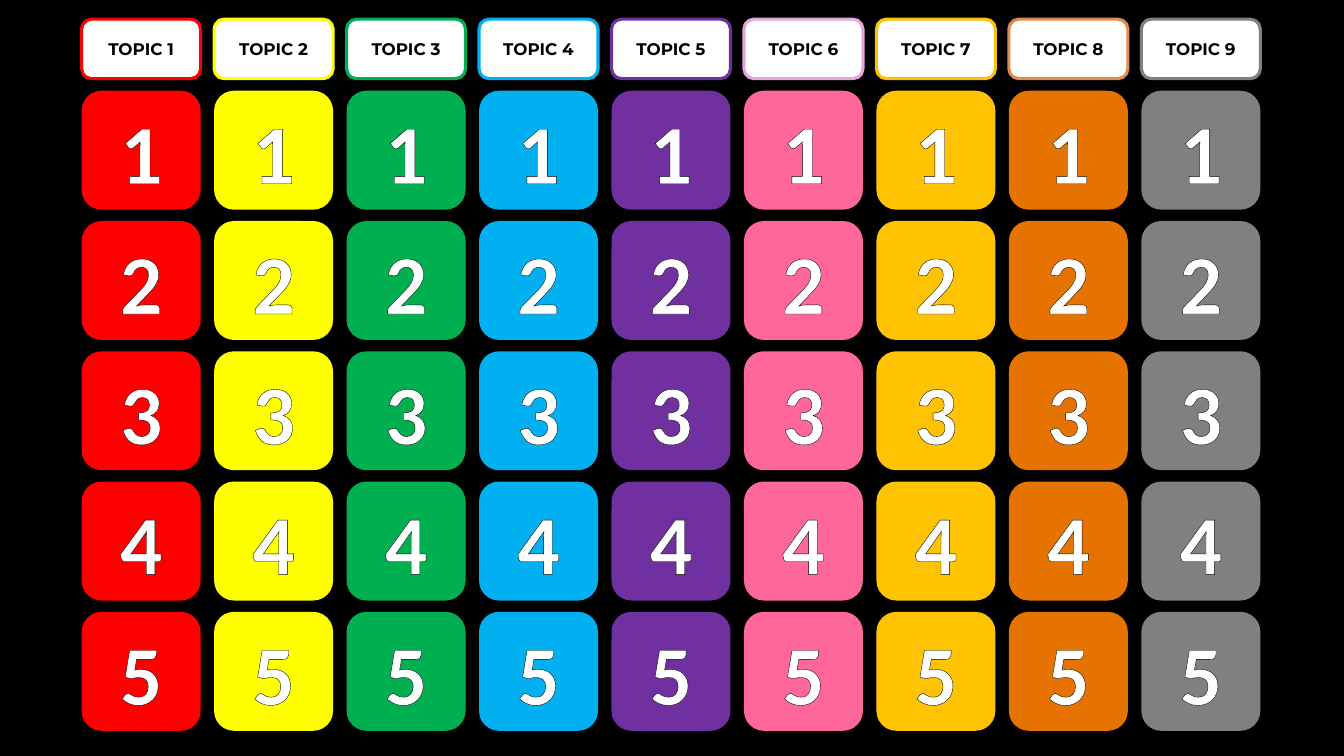
from lxml import etree
from pptx import Presentation
from pptx.dml.color import RGBColor
from pptx.enum.shapes import MSO_SHAPE as Shape
from pptx.enum.text import MSO_ANCHOR as Anchor, PP_ALIGN as Align
from pptx.oxml import parse_xml
from pptx.oxml.ns import nsdecls
from pptx.util import Inches, Pt

# Colours
BLACK = RGBColor(0x00, 0x00, 0x00)
WHITE = RGBColor(0xFF, 0xFF, 0xFF)
RED = RGBColor(0xFF, 0x00, 0x00)
YELLOW = RGBColor(0xFF, 0xFF, 0x00)
GREEN = RGBColor(0x00, 0xB0, 0x50)
BLUE = RGBColor(0x00, 0xB0, 0xF0)
PURPLE = RGBColor(0x70, 0x30, 0xA0)
PINK = RGBColor(0xFF, 0x66, 0x99)
LILAC = RGBColor(0xE6, 0xA5, 0xDC)
GOLD = RGBColor(0xFF, 0xC3, 0x01)
AMBER = RGBColor(0xFF, 0xC0, 0x00)
ORANGE = RGBColor(0xE6, 0x73, 0x00)
COPPER = RGBColor(0xE0, 0x8B, 0x52)
GREY = RGBColor(0x80, 0x80, 0x80)

# Content: topic, tile colour, header border colour
TOPICS = [
    ("TOPIC 1", RED, RED),
    ("TOPIC 2", YELLOW, YELLOW),
    ("TOPIC 3", GREEN, GREEN),
    ("TOPIC 4", BLUE, BLUE),
    ("TOPIC 5", PURPLE, PURPLE),
    ("TOPIC 6", PINK, LILAC),
    ("TOPIC 7", GOLD, AMBER),
    ("TOPIC 8", ORANGE, COPPER),
    ("TOPIC 9", GREY, GREY),
]
NUMBERS = ["1", "2", "3", "4", "5"]

# Grid, in inches
LEFT_FIRST, LEFT_LAST = 0.81, 11.32
TOP_FIRST, TOP_LAST = 0.9, 6.07
TILE_SIZE = 1.18
HEADER_TOP, HEADER_HEIGHT = 0.19, 0.59
COLUMN_STEP = (LEFT_LAST - LEFT_FIRST) / (len(TOPICS) - 1)
ROW_STEP = (TOP_LAST - TOP_FIRST) / (len(NUMBERS) - 1)
BORDER = Pt(2.25)


def add_shadow(shape):
    shape.shadow.inherit = False
    effects = shape._element.spPr.find("{*}effectLst")
    effects.append(parse_xml(
        f'<a:outerShdw {nsdecls("a")} blurRad="{Pt(3.5)}" dist="{Pt(2.2)}" '
        'dir="5400000" algn="ctr" rotWithShape="0">'
        f'<a:srgbClr val="{BLACK}"><a:alpha val="32000"/></a:srgbClr></a:outerShdw>'))


def write_text(shape, text, *, font, size, color, outline=None):
    frame = shape.text_frame
    frame.word_wrap = True
    frame.vertical_anchor = Anchor.MIDDLE
    paragraph = frame.paragraphs[0]
    paragraph.alignment = Align.CENTER
    run = paragraph.add_run()
    run.text = text
    run.font.name = font
    run.font.size = Pt(size)
    run.font.bold = True
    run.font.color.rgb = color
    if outline is not None:
        # The text outline has to come before the fill
        run.font._element.insert(0, parse_xml(
            f'<a:ln {nsdecls("a")} w="{BORDER}"><a:solidFill>'
            f'<a:srgbClr val="{outline}"/></a:solidFill></a:ln>'))


def add_card(slide, left, top, height, fill, border=None):
    card = slide.shapes.add_shape(
        Shape.ROUNDED_RECTANGLE, Inches(left), Inches(top),
        Inches(TILE_SIZE), Inches(height))
    card.fill.solid()
    card.fill.fore_color.rgb = fill
    if border is None:
        card.line.fill.background()
    else:
        card.line.color.rgb = border
        card.line.width = BORDER
    add_shadow(card)
    return card


def main():
    presentation = Presentation()
    presentation.slide_width = Inches(13.33)
    presentation.slide_height = Inches(7.5)
    slide = presentation.slides.add_slide(presentation.slide_layouts[6])
    slide.background.fill.solid()
    slide.background.fill.fore_color.rgb = BLACK

    # Number tiles, each column from the bottom up
    for column, (_, tile_color, _) in enumerate(TOPICS):
        left = LEFT_FIRST + column * COLUMN_STEP
        for row, number in reversed(list(enumerate(NUMBERS))):
            tile = add_card(slide, left, TOP_FIRST + row * ROW_STEP,
                            TILE_SIZE, tile_color)
            write_text(tile, number, font="Calibri", size=60,
                       color=WHITE, outline=BLACK)

    # Topic headers
    for column, (topic, _, border_color) in enumerate(TOPICS):
        header = add_card(slide, LEFT_FIRST + column * COLUMN_STEP, HEADER_TOP,
                          HEADER_HEIGHT, WHITE, border_color)
        write_text(header, topic, font="Montserrat", size=12, color=BLACK)

    presentation.save("out.pptx")


if __name__ == "__main__":
    main()
